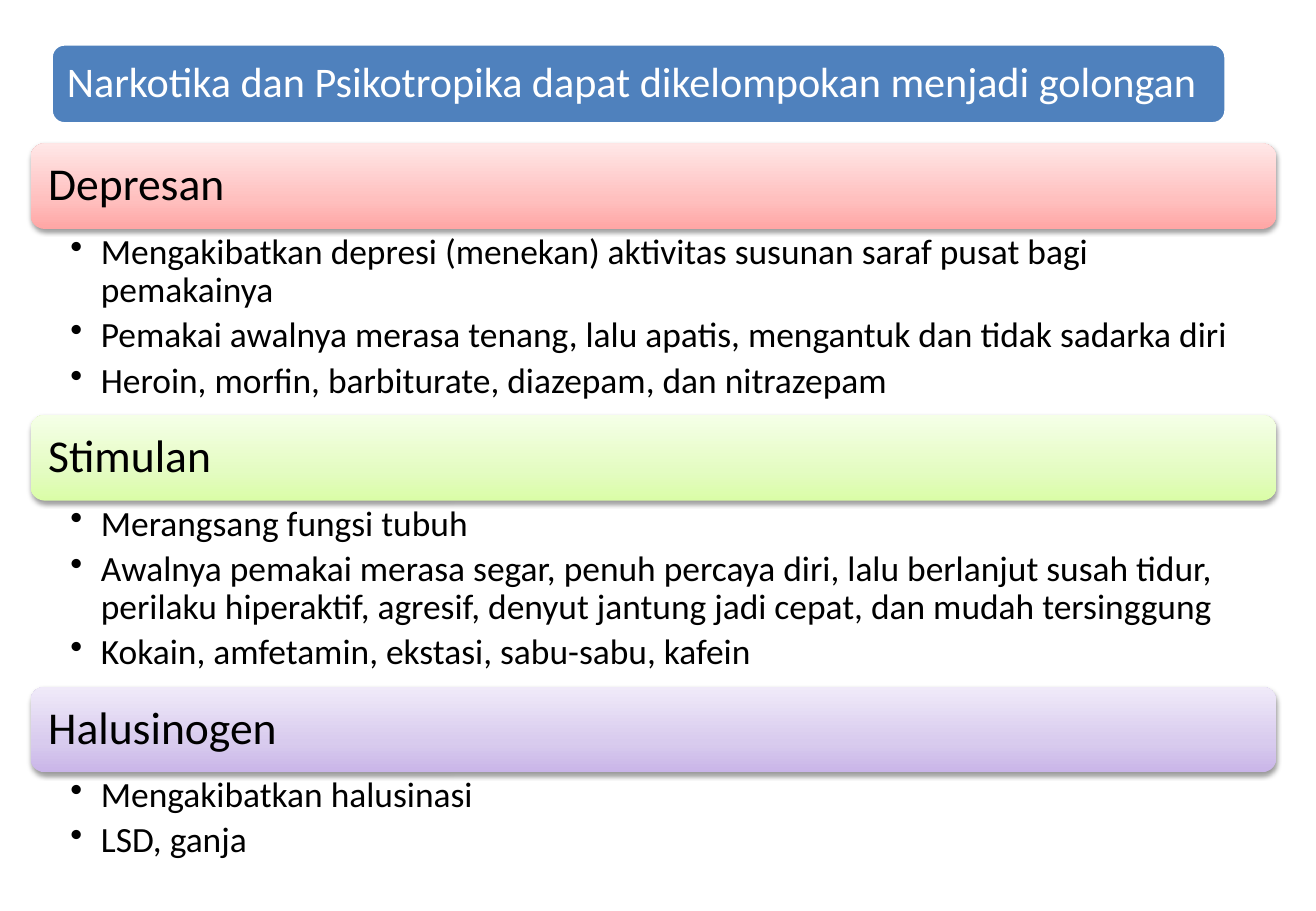
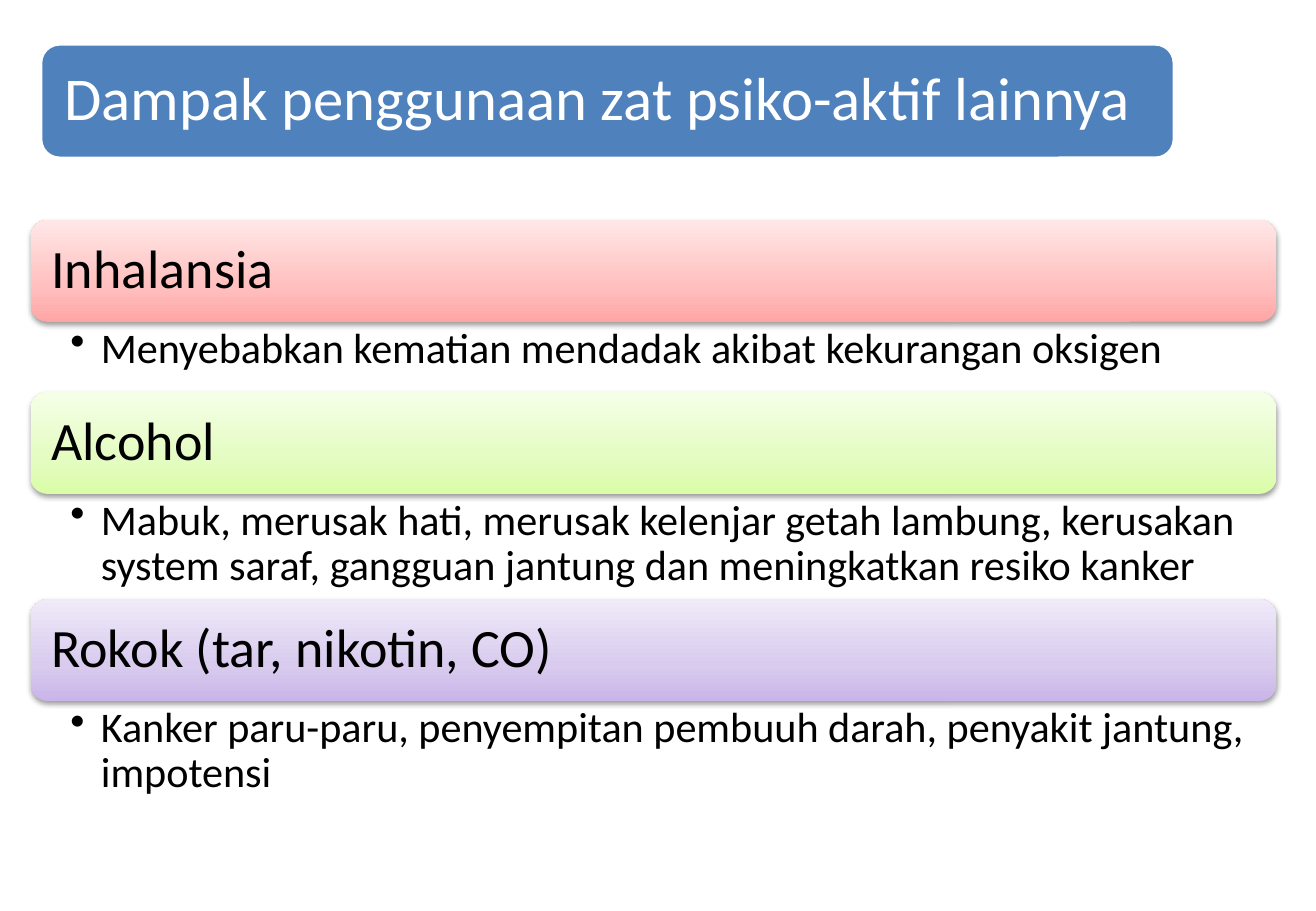
from dataclasses import dataclass

from lxml.etree import SubElement
from pptx import Presentation
from pptx.dml.color import RGBColor
from pptx.enum.shapes import MSO_SHAPE as Shp
from pptx.enum.text import MSO_ANCHOR as Anchor, PP_ALIGN as Align
from pptx.oxml.ns import qn
from pptx.util import Cm, Pt

# Shared style
FONT = "Calibri"
BLACK = RGBColor(0x00, 0x00, 0x00)
WHITE = RGBColor(0xFF, 0xFF, 0xFF)
BLUE = RGBColor(0x4F, 0x81, 0xBD)
RED_SHADES = (RGBColor(0xFF, 0xA6, 0xA5), RGBColor(0xFF, 0xC0, 0xBF), RGBColor(0xFF, 0xE7, 0xE7))
GREEN_SHADES = (RGBColor(0xDA, 0xFD, 0xA7), RGBColor(0xE4, 0xFC, 0xC2), RGBColor(0xF5, 0xFF, 0xE7))
PURPLE_SHADES = (RGBColor(0xC9, 0xB5, 0xE8), RGBColor(0xD8, 0xCB, 0xEE), RGBColor(0xF0, 0xEA, 0xF9))
SECTION_SHADES = (RED_SHADES, GREEN_SHADES, PURPLE_SHADES)
STOPS = (0, 35, 100)

LIST_LEFT, LIST_WIDTH = Cm(0.64), Cm(26.04)
TITLE_TOP = Cm(0.92)
BULLET_INDENT = Cm(0.64)


@dataclass
class Title:
    text: str
    left: Cm
    width: Cm
    height: Cm
    size: int
    inset: Cm


@dataclass
class Section:
    heading: str
    bullets: tuple[str, ...]
    body_height: Cm


@dataclass
class Page:
    title: Title
    top: Cm
    heading_height: Cm
    heading_size: int
    heading_inset: Cm
    body_size: int
    body_right: Cm
    sections: tuple[Section, ...]


PAGES = (
    Page(
        Title("Narkotika dan Psikotropika dapat dikelompokan menjadi golongan",
              Cm(1.07), Cm(24.56), Cm(1.67), 25, Cm(0.25)),
        Cm(3), Cm(1.79), 27, Cm(0.28), 21, Cm(0.53),
        (
            Section("Depresan", (
                "Mengakibatkan depresi (menekan) aktivitas susunan saraf pusat bagi pemakainya",
                "Pemakai awalnya merasa tenang, lalu apatis, mengantuk dan tidak sadarka diri",
                "Heroin, morfin, barbiturate, diazepam, dan nitrazepam",
            ), Cm(3.89)),
            Section("Stimulan", (
                "Merangsang fungsi tubuh",
                "Awalnya pemakai merasa segar, penuh percaya diri, lalu berlanjut susah tidur, "
                "perilaku hiperaktif, agresif, denyut jantung jadi cepat, dan mudah tersinggung",
                "Kokain, amfetamin, ekstasi, sabu-sabu, kafein",
            ), Cm(3.89)),
            Section("Halusinogen", ("Mengakibatkan halusinasi", "LSD, ganja"), Cm(2)),
        ),
    ),
    Page(
        Title("Dampak penggunaan zat psiko-aktif lainnya",
              Cm(0.85), Cm(23.7), Cm(2.39), 36, Cm(0.38)),
        Cm(4.6), Cm(2.13), 32, Cm(0.33), 25, Cm(0.64),
        (
            Section("Inhalansia", (
                "Menyebabkan kematian mendadak akibat kekurangan oksigen",
            ), Cm(1.47)),
            Section("Alcohol", (
                "Mabuk, merusak hati, merusak kelenjar getah lambung, kerusakan system saraf, "
                "gangguan jantung dan meningkatkan resiko kanker",
            ), Cm(2.2)),
            Section("Rokok (tar, nikotin, CO)", (
                "Kanker paru-paru, penyempitan pembuuh darah, penyakit jantung, impotensi",
            ), Cm(2.2)),
        ),
    ),
)


def style_paragraph(p, text: str, size: int, color: RGBColor) -> None:
    p.text = text
    p.alignment = Align.LEFT
    p.line_spacing = 0.9
    p.font.name, p.font.size = FONT, Pt(size)
    p.font.color.rgb = color


def add_bar(slide, left: int, top: int, width: int, height: int,
            text: str, size: int, color: RGBColor, inset: int):
    """Rounded bar with one line of text."""
    s = slide.shapes.add_shape(Shp.ROUNDED_RECTANGLE, left, top, width, height)
    s.shadow.inherit = False
    tf = s.text_frame
    tf.word_wrap = True
    tf.vertical_anchor = Anchor.MIDDLE
    tf.margin_left = tf.margin_right = tf.margin_top = tf.margin_bottom = inset
    style_paragraph(tf.paragraphs[0], text, size, color)
    return s


def add_title(slide, title: Title) -> None:
    s = add_bar(slide, title.left, TITLE_TOP, title.width, title.height,
                title.text, title.size, WHITE, title.inset)
    s.fill.solid()
    s.fill.fore_color.rgb = BLUE
    s.line.color.rgb = WHITE
    s.line.width = Pt(2)


def shade(s, shades: tuple[RGBColor, ...]) -> None:
    """Vertical three-stop gradient, no outline and a soft shadow."""
    s.fill.gradient()
    s.fill.gradient_angle = 90
    s.line.fill.background()
    sp_pr = s.element.spPr
    stops = sp_pr.find(qn("a:gradFill")).find(qn("a:gsLst"))
    for old in list(stops):
        stops.remove(old)
    for pos, color in zip(STOPS, shades):
        stop = SubElement(stops, qn("a:gs"), pos=str(pos * 1000))
        SubElement(stop, qn("a:srgbClr"), val=str(color))
    shadow = SubElement(sp_pr.find(qn("a:effectLst")), qn("a:outerShdw"),
                        blurRad=str(Pt(3.1)), dist=str(Pt(1.6)), dir="5400000", rotWithShape="0")
    shadow_color = SubElement(shadow, qn("a:srgbClr"), val=str(BLACK))
    SubElement(shadow_color, qn("a:alpha"), val="38000")


def add_bullets(slide, top: int, section: Section, page: Page) -> None:
    s = slide.shapes.add_textbox(LIST_LEFT, top, LIST_WIDTH, section.body_height)
    tf = s.text_frame
    tf.word_wrap = True
    tf.margin_left, tf.margin_right = Cm(0.83), page.body_right
    tf.margin_top = tf.margin_bottom = Cm(0.1)
    for i, text in enumerate(section.bullets):
        p = tf.add_paragraph() if i else tf.paragraphs[0]
        style_paragraph(p, text, page.body_size, BLACK)
        p.level = 1
        p.space_after = Pt(page.body_size * 0.2)
        p_pr = p._p.get_or_add_pPr()
        p_pr.set("marL", str(BULLET_INDENT))
        p_pr.set("indent", str(-BULLET_INDENT))
        bullet = p_pr.makeelement(qn("a:buChar"), {"char": "•"})
        p_pr.insert_element_before(bullet, "a:tabLst", "a:defRPr", "a:extLst")


def add_page(prs, page: Page) -> None:
    slide = prs.slides.add_slide(prs.slide_layouts[6])

    # Headings and bullet lists, stacked
    top = page.top
    for section, shades in zip(page.sections, SECTION_SHADES):
        s = add_bar(slide, LIST_LEFT, top, LIST_WIDTH, page.heading_height,
                    section.heading, page.heading_size, BLACK, page.heading_inset)
        shade(s, shades)
        top += page.heading_height
        add_bullets(slide, top, section, page)
        top += section.body_height

    add_title(slide, page.title)


def main() -> None:
    prs = Presentation()
    prs.slide_width, prs.slide_height = Cm(27.51), Cm(19.05)
    for page in PAGES:
        add_page(prs, page)
    prs.save("out.pptx")


if __name__ == "__main__":
    main()
